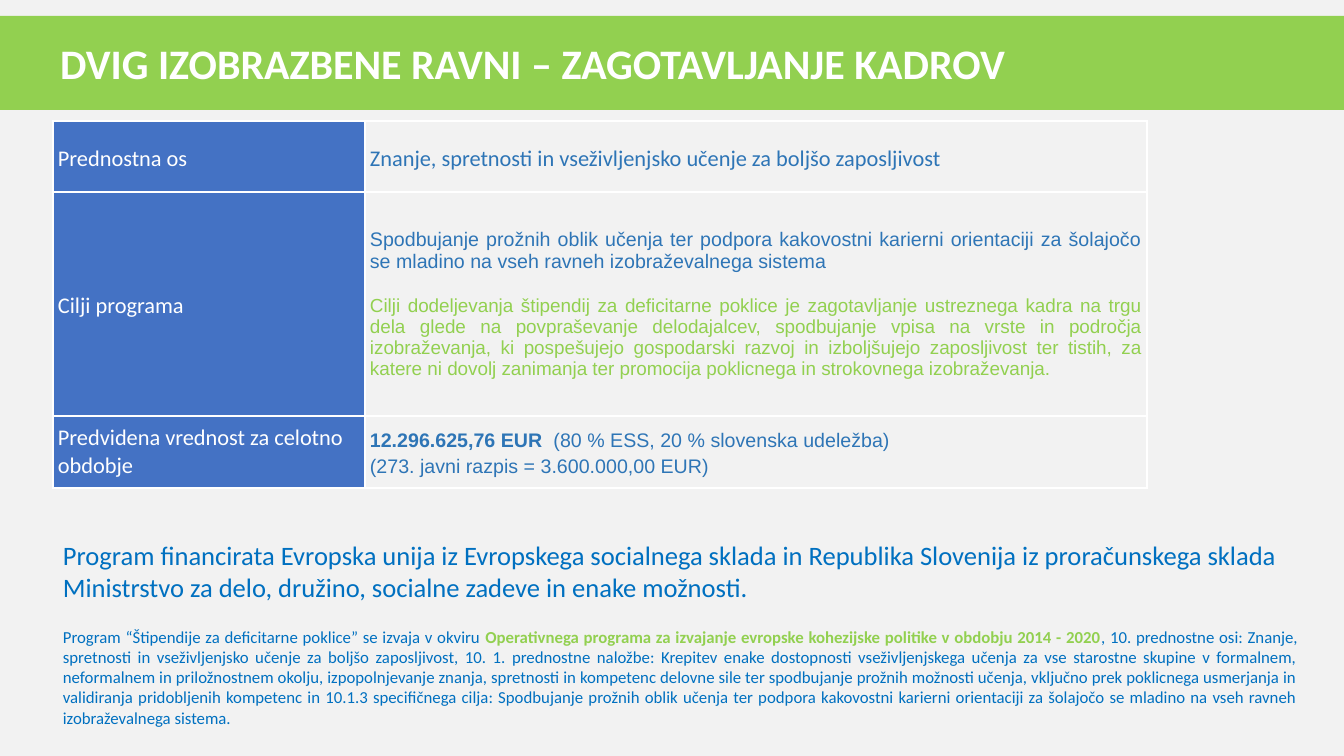
from lxml import etree
from pptx import Presentation
from pptx import util as u
from pptx.dml.color import RGBColor
from pptx.enum import text
from pptx.oxml.ns import qn

PX = 914400 / 100.8
COLORS = {
    "paper": "F2F2F2",
    "white": "FFFFFF",
    "green": "92D050",
    "label": "4472C4",
    "value": "2E75B6",
    "funding": "0070C0",
}
JUSTIFY = text.PP_ALIGN.JUSTIFY
LEFT = text.PP_ALIGN.LEFT


def px(length):
    return u.Emu(round(length * PX))


def write(frame, paragraphs):
    for index, (align, spacing, before, runs) in enumerate(paragraphs):
        paragraph = frame.paragraphs[0] if index == 0 else frame.add_paragraph()
        paragraph.alignment = align
        paragraph.line_spacing = spacing
        if index:
            paragraph.space_before = u.Pt(before)
        for words, font, size, color, bold in runs:
            run = paragraph.add_run()
            run.text = words
            run.font.name = font
            run.font.size = u.Pt(size)
            run.font.bold = bold
            run.font.color.rgb = RGBColor.from_string(COLORS[color])


deck = Presentation()
deck.slide_width, deck.slide_height = px(1344), px(756)
slide = deck.slides.add_slide(deck.slide_layouts[5])
slide.background.fill.solid()
slide.background.fill.fore_color.rgb = RGBColor.from_string(COLORS["paper"])

program_rows = [
    (71,
     [(JUSTIFY, 1.15, 0, [("Prednostna os", "Calibri", 16, "white", False)])],
     [(JUSTIFY, 1.15, 0, [("Znanje, spretnosti in vseživljenjsko učenje za boljšo zaposljivost",
                           "Calibri", 16, "value", False)])]),
    (224,
     [(JUSTIFY, 1.15, 0, [("Cilji programa", "Calibri", 16, "white", False)])],
     [(JUSTIFY, 1.0, 0, [("Spodbujanje prožnih oblik učenja ter podpora kakovostni karierni orientaciji "
                          "za šolajočo se mladino na vseh ravneh izobraževalnega sistema",
                          "Arial", 14, "value", False)]),
      (JUSTIFY, 1.0, 16, [("Cilji dodeljevanja štipendij za deficitarne poklice je zagotavljanje ustreznega "
                           "kadra na trgu dela glede na povpraševanje delodajalcev, spodbujanje vpisa na vrste "
                           "in področja izobraževanja, ki pospešujejo gospodarski razvoj in izboljšujejo "
                           "zaposljivost ter tistih, za katere ni dovolj zanimanja ter promocija poklicnega "
                           "in strokovnega izobraževanja.", "Arial", 13.5, "green", False)])]),
    (72,
     [(LEFT, 1.0, 0, [("Predvidena vrednost za celotno obdobje", "Calibri", 16, "white", False)])],
     [(JUSTIFY, 1.15, 0, [("12.296.625,76 EUR ", "Arial", 14, "value", True),
                          (" (80 % ESS, 20 % slovenska udeležba)", "Arial", 14, "value", False)]),
      (JUSTIFY, 1.15, 0, [("(273. javni razpis = 3.600.000,00 EUR)", "Arial", 14, "value", False)])]),
]
column_widths = [312, 782]
program = slide.shapes.add_table(
    len(program_rows), 2, px(53), px(121), px(sum(column_widths)),
    px(sum(row[0] for row in program_rows))).table
for column, width in zip(program.columns, column_widths):
    column.width = px(width)
for r, (height, *contents) in enumerate(program_rows):
    program.rows[r].height = px(height)
    for c, paragraphs in enumerate(contents):
        cell = program.cell(r, c)
        cell.margin_left = cell.margin_right = px(5)
        cell.margin_top = cell.margin_bottom = 0
        cell.vertical_anchor = text.MSO_ANCHOR.MIDDLE
        properties = cell._tc.get_or_add_tcPr()
        for side in "LRTB":
            border = etree.SubElement(properties, qn(f"a:ln{side}"), w=str(u.Pt(1)))
            border_fill = etree.SubElement(border, qn("a:solidFill"))
            etree.SubElement(border_fill, qn("a:srgbClr"), val=COLORS["white"])
        if c == 0:
            cell.fill.solid()
            cell.fill.fore_color.rgb = RGBColor.from_string(COLORS["label"])
        else:
            cell.fill.background()
        write(cell.text_frame, paragraphs)

funding = slide.shapes.add_textbox(px(53), px(534), px(1255), px(201)).text_frame
funding.word_wrap = True
write(funding, [
    (LEFT, 1.0, 0, [("Program financirata Evropska unija iz Evropskega socialnega sklada in Republika Slovenija "
                     "iz proračunskega sklada Ministrstvo za delo, družino, socialne zadeve in enake možnosti.",
                     "Calibri", 19, "funding", False)]),
    (JUSTIFY, 1.0, 17, [
        ("Program “Štipendije za deficitarne poklice” se izvaja v okviru ", "Calibri", 12, "funding", False),
        ("Operativnega programa za izvajanje evropske kohezijske politike v obdobju 2014 - 2020",
         "Calibri", 12, "green", True),
        (", 10. prednostne osi: Znanje, spretnosti in vseživljenjsko učenje za boljšo zaposljivost, "
         "10. 1. prednostne naložbe: Krepitev enake dostopnosti vseživljenjskega učenja za vse starostne "
         "skupine v formalnem, neformalnem in priložnostnem okolju, izpopolnjevanje znanja, spretnosti in "
         "kompetenc delovne sile ter spodbujanje prožnih možnosti učenja, vključno prek poklicnega "
         "usmerjanja in validiranja pridobljenih kompetenc in 10.1.3 specifičnega cilja: Spodbujanje "
         "prožnih oblik učenja ter podpora kakovostni karierni orientaciji za šolajočo se mladino na vseh "
         "ravneh izobraževalnega sistema.", "Calibri", 12, "funding", False)]),
])

heading = slide.shapes.title
heading.left, heading.top, heading.width, heading.height = px(0), px(16), px(1344), px(94)
heading.fill.solid()
heading.fill.fore_color.rgb = RGBColor.from_string(COLORS["green"])
heading.text_frame.auto_size = text.MSO_AUTO_SIZE.NONE
heading.text_frame.vertical_anchor = text.MSO_ANCHOR.MIDDLE
heading.text_frame.margin_left = px(60)
write(heading.text_frame, [
    (LEFT, 1.0, 0, [("DVIG IZOBRAZBENE RAVNI – ZAGOTAVLJANJE KADROV", "Calibri", 30, "white", True)]),
])

deck.save("out.pptx")
